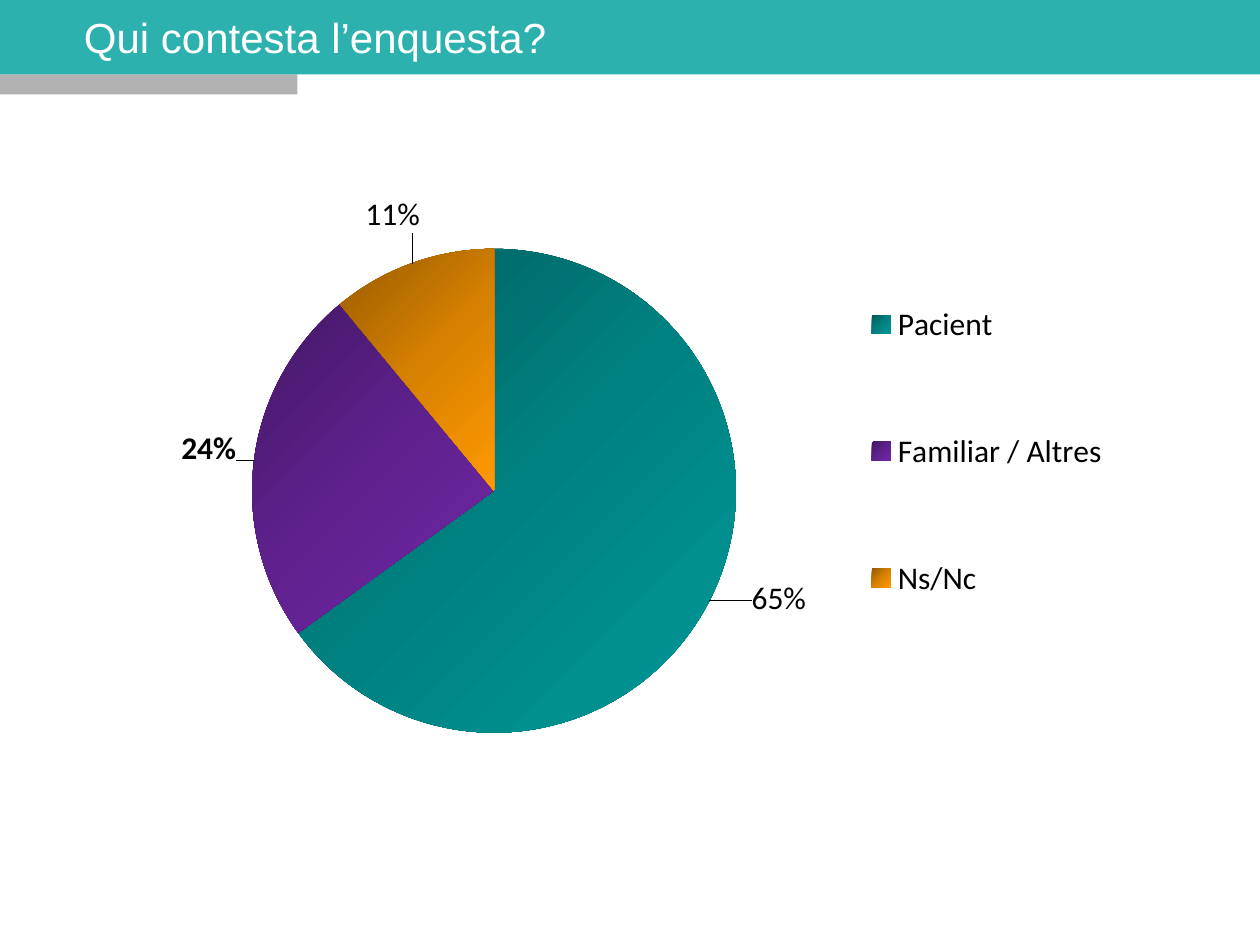
import copy

import pptx
import pptx.chart.data
import pptx.dml.color
import pptx.enum.chart
import pptx.enum.shapes
import pptx.enum.text
import pptx.oxml
import pptx.oxml.ns
import pptx.util

Pt = pptx.util.Pt
Color = pptx.dml.color.RGBColor.from_string
THEME = {
    "teal": Color("2CB1AE"),
    "grey": Color("B2B2B2"),
    "title": {"name": "Arial", "size": Pt(24), "color": Color("FFFFFF")},
    "chart": {"name": "Arial", "size": Pt(22.3), "color": Color("000000")},
    "label": {"name": "Calibri", "size": Pt(18), "color": Color("000000")},
}


def style_font(font, values):
    for name, value in values.items():
        if name == "color":
            font.color.rgb = value
        else:
            setattr(font, name, value)


def place(parent, index, modes, **percents):
    """Give a chart part a manual layout, in percent of the chart."""
    for old in parent.findall(pptx.oxml.ns.qn("c:layout")):
        parent.remove(old)
    values = modes | {name: percent / 100 for name, percent in percents.items()}
    items = "".join(f'<c:{name} val="{value}"/>' for name, value in values.items())
    parent.insert(index, pptx.oxml.parse_xml(
        f'<c:layout {pptx.oxml.ns.nsdecls("c")}><c:manualLayout>{items}'
        '</c:manualLayout></c:layout>'))


deck = pptx.Presentation()
deck.slide_width, deck.slide_height = Pt(720), Pt(540)
page = deck.slides.add_slide(deck.slide_layouts[6])

# Header band and the grey tab below it
for left, top, width, height, color in [
    (0, 42.5, 170, 11.5, THEME["grey"]),
    (0, 0, 720, 42.5, THEME["teal"]),
]:
    band = page.shapes.add_shape(pptx.enum.shapes.MSO_SHAPE.RECTANGLE,
                                 Pt(left), Pt(top), Pt(width), Pt(height))
    band.shadow.inherit = False
    band.fill.solid()
    band.fill.fore_color.rgb = color
    band.line.fill.background()

# Title
box = page.shapes.add_textbox(Pt(48), Pt(0), Pt(660), Pt(41.5))
frame = box.text_frame
for name, value in {"word_wrap": True, "margin_left": 0, "margin_right": 0,
                    "margin_top": 0, "margin_bottom": 0,
                    "vertical_anchor": pptx.enum.text.MSO_ANCHOR.MIDDLE}.items():
    setattr(frame, name, value)
span = frame.paragraphs[0].add_run()
span.text = "Qui contesta l’enquesta?"
style_font(span.font, THEME["title"])

# Pie chart: category, value, gradient, label bold, label offset in percent
slices = [
    ("Pacient", 65, ("005B5B", "008181", "009999"), False, (3.4, -3.6)),
    ("Familiar / Altres", 24, ("431764", "5F218E", "7128A8"), True, (-1, 1.1)),
    ("Ns/Nc", 11, ("975B00", "D78100", "FF9900"), False, (1, -3.3)),
]
data = pptx.chart.data.CategoryChartData()
data.categories = [item[0] for item in slices]
data.add_series("Series 1", [item[1] for item in slices])
chart = page.shapes.add_chart(pptx.enum.chart.XL_CHART_TYPE.PIE, Pt(80), Pt(60.5),
                              Pt(596), Pt(396.7), data).chart
chart.has_title = False
style_font(chart.font, THEME["chart"])
edge = {"xMode": "edge", "yMode": "edge"}
place(chart._chartSpace.chart.plotArea, 0, {"layoutTarget": "inner"} | edge,
      x=8.7, y=20.6, w=50.5, h=69.7)

# Legend
chart.has_legend = True
legend = chart.legend
legend.position = pptx.enum.chart.XL_LEGEND_POSITION.RIGHT
legend.include_in_layout = False
style_font(legend.font, THEME["label"])
place(legend._element, 1, edge, x=67.2, y=16, w=28, h=67.5)

# Percent labels
series = chart.plots[0].series[0]
labels = series.data_labels
labels.show_percentage, labels.show_value = True, False
labels.position = pptx.enum.chart.XL_LABEL_POSITION.OUTSIDE_END
style_font(labels.font, THEME["label"] | {"bold": True})

# Slice gradients and label positions
for index, (_, _, colors, bold, (dx, dy)) in enumerate(slices):
    point = series.points[index]
    fill = point.format.fill
    fill.gradient()
    fill.gradient_angle = 315
    stop_list = fill.gradient_stops._gsLst
    stop_list.insert(1, copy.deepcopy(stop_list[0]))
    for stop, position, color in zip(fill.gradient_stops, (0, 0.5, 1), colors):
        stop.position = position
        stop.color.rgb = Color(color)

    label = point.data_label
    style_font(label.font, THEME["label"] | {"bold": bold})
    label.position = pptx.enum.chart.XL_LABEL_POSITION.OUTSIDE_END
    element = label._dLbl
    for flag, shown in {"showVal": "0", "showPercent": "1"}.items():
        element.find(pptx.oxml.ns.qn(f"c:{flag}")).set("val", shown)
    place(element, 1, {}, x=dx, y=dy)

deck.save("out.pptx")
